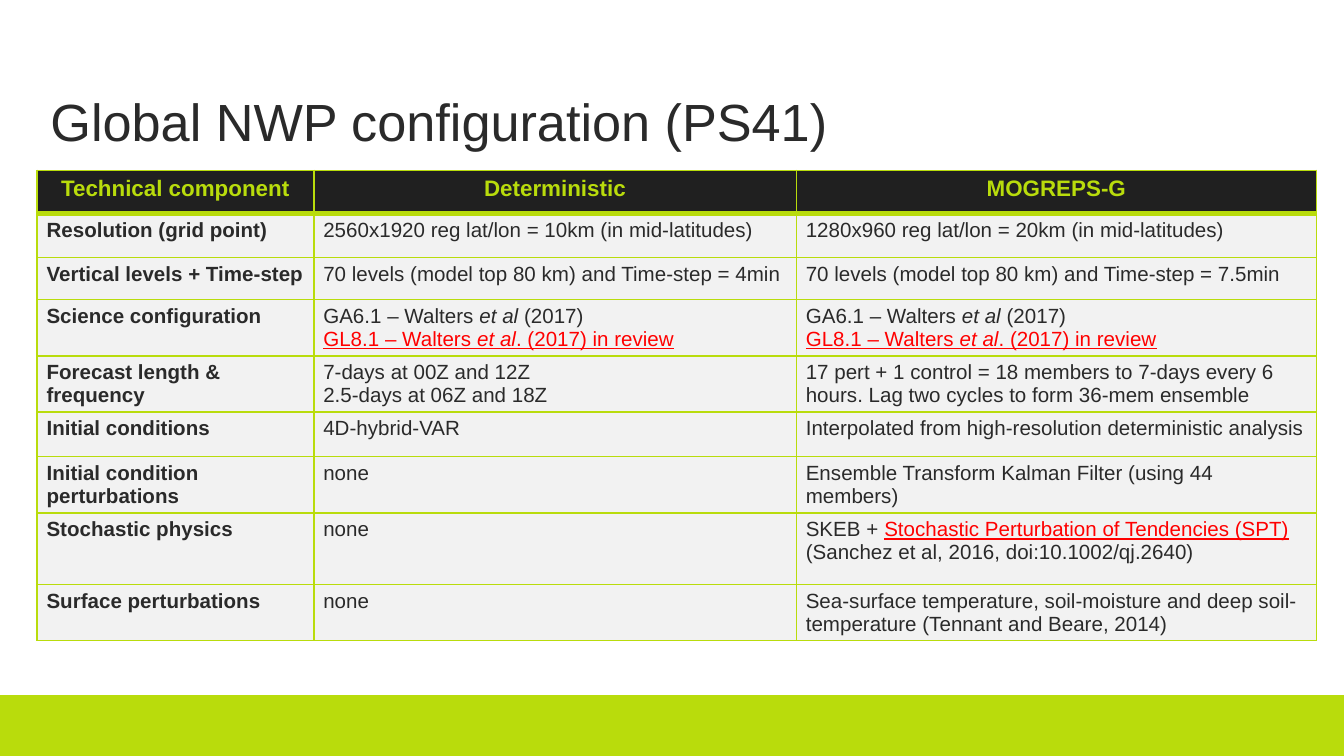
from lxml.etree import SubElement
from pptx import Presentation
from pptx.dml.color import RGBColor
from pptx.enum.shapes import MSO_SHAPE as Preset
from pptx.enum.text import MSO_ANCHOR as Anchor, MSO_AUTO_SIZE as AutoSize, PP_ALIGN as Align
from pptx.oxml import parse_xml
from pptx.oxml.ns import nsdecls, qn
from pptx.util import Cm, Pt

COLORS = {"lime": "B9DC0C", "header": "202020", "text": "2A2A2A",
          "new": "FF0000", "body": "BFBFBF", "page": "FFFFFF"}
NEW = {"color": "new", "underline": True}
SCIENCE = [
    [("GA6.1 – Walters ", {}), ("et al ", {"italic": True}), ("(2017)", {})],
    [("GL8.1 – Walters ", NEW), ("et al", {**NEW, "italic": True}), (". (2017) in review", NEW)],
]
STOCHASTIC = [[("SKEB + ", {}), ("Stochastic Perturbation of Tendencies (SPT) ", NEW),
               ("(Sanchez et al, 2016, doi:10.1002/qj.2640)", {})]]
HEADINGS = ("Technical component", "Deterministic", "MOGREPS-G")
COMPONENTS = [
    ("Resolution (grid point)", "2560x1920 reg lat/lon = 10km (in mid-latitudes)",
     "1280x960 reg lat/lon = 20km (in mid-latitudes)"),
    ("Vertical levels + Time-step", "70 levels (model top 80 km) and Time-step = 4min",
     "70 levels (model top 80 km) and Time-step = 7.5min"),
    ("Science configuration", SCIENCE, SCIENCE),
    ("Forecast length & frequency",
     [[("7-days at 00Z and 12Z", {})], [("2.5-days at 06Z and 18Z", {})]],
     "17 pert + 1 control = 18 members to 7-days every 6 hours. "
     "Lag two cycles to form 36-mem ensemble"),
    ("Initial conditions", "4D-hybrid-VAR",
     "Interpolated from high-resolution deterministic analysis"),
    ("Initial condition perturbations", "none",
     "Ensemble Transform Kalman Filter (using 44 members)"),
    ("Stochastic physics", "none", STOCHASTIC),
    ("Surface perturbations", "none",
     "Sea-surface temperature, soil-moisture and deep soil-temperature "
     "(Tennant and Beare, 2014)"),
]
COLUMN_WIDTHS = (5.23, 9.12, 9.83)
ROW_HEIGHTS = (0.81, 0.84, 0.79, 0.89, 0.84, 0.84, 0.84, 1.35, 0.94)


def rgb(name):
    return RGBColor.from_string(COLORS[name])


def write_text(frame, content, size=11, color="text", bold=False, align=Align.LEFT, spacing=None):
    lines = [[(content, {})]] if isinstance(content, str) else content
    for number, line in enumerate(lines):
        paragraph = frame.add_paragraph() if number else frame.paragraphs[0]
        paragraph.alignment = align
        paragraph.line_spacing = spacing
        for words, style in line:
            run = paragraph.add_run()
            run.text = words
            font = run.font
            font.name, font.size, font.bold = "Arial", Pt(size), bold
            font.italic = style.get("italic", False)
            font.underline = style.get("underline", False)
            font.color.rgb = rgb(style.get("color", color))


def style_cell(cell, fill, alpha=None, bottom=1):
    cell.margin_left = cell.margin_right = Cm(0.18)
    cell.margin_top = cell.margin_bottom = Cm(0.1)
    cell.vertical_anchor = Anchor.TOP
    cell.fill.solid()
    cell.fill.fore_color.rgb = rgb(fill)
    properties = cell._tc.get_or_add_tcPr()
    if alpha:
        tint = properties.find(".//" + qn("a:srgbClr"))
        SubElement(tint, qn("a:alpha"), val=str(alpha * 1000))
    for place, (side, width) in enumerate((("L", 1), ("R", 1), ("T", 1), ("B", bottom))):
        properties.insert(place, parse_xml(
            f'<a:ln{side} {nsdecls("a")} w="{Pt(width)}"><a:solidFill>'
            f'<a:srgbClr val="{COLORS["lime"]}"/></a:solidFill></a:ln{side}>'))


def place_title(slide, left, top, width, height):
    title = slide.shapes.title
    title.left, title.top, title.width, title.height = map(Cm, (left, top, width, height))
    frame = title.text_frame
    frame.word_wrap = True
    frame.auto_size = AutoSize.NONE
    frame.vertical_anchor = Anchor.BOTTOM
    write_text(frame, "Global NWP configuration (PS41)", size=28, spacing=0.9)


def place_configuration(slide, left, top, width, height):
    rows = [HEADINGS, *COMPONENTS]
    table = slide.shapes.add_table(len(rows), len(HEADINGS),
                                   *map(Cm, (left, top, width, height))).table
    table.horz_banding = False
    for column, share in zip(table.columns, COLUMN_WIDTHS):
        column.width = Cm(width * share / sum(COLUMN_WIDTHS))
    for row, share in zip(table.rows, ROW_HEIGHTS):
        row.height = Cm(height * share / sum(ROW_HEIGHTS))
    for r, contents in enumerate(rows):
        for c, content in enumerate(contents):
            cell = table.cell(r, c)
            if r == 0:
                style_cell(cell, "header", bottom=3)
                write_text(cell.text_frame, content, size=12, color="lime",
                           bold=True, align=Align.CENTER)
            else:
                style_cell(cell, "body", alpha=20, bottom=1)
                write_text(cell.text_frame, content, bold=c == 0)
    for c in range(len(HEADINGS)):
        edge = table.cell(1, c)._tc.tcPr.find(qn("a:lnT"))
        edge.set("w", str(Pt(3)))


def place_footer_band(slide, left, top, width, height):
    band = slide.shapes.add_shape(Preset.RECTANGLE, *map(Cm, (left, top, width, height)))
    band.shadow.inherit = False
    band.fill.solid()
    band.fill.fore_color.rgb = rgb("lime")
    band.line.color.rgb = rgb("lime")
    band.line.width = Pt(1)


def main():
    deck = Presentation()
    deck.slide_width, deck.slide_height = Cm(25.4), Cm(14.29)
    slide = deck.slides.add_slide(deck.slide_layouts[5])
    slide.background.fill.solid()
    slide.background.fill.fore_color.rgb = rgb("page")
    place_footer_band(slide, 0, 13.15, 25.4, 1.14)
    place_configuration(slide, 0.7, 3.22, sum(COLUMN_WIDTHS), sum(ROW_HEIGHTS))
    place_title(slide, 0.7, 1.42, 24, 1.6)
    deck.save("out.pptx")


if __name__ == "__main__":
    main()
